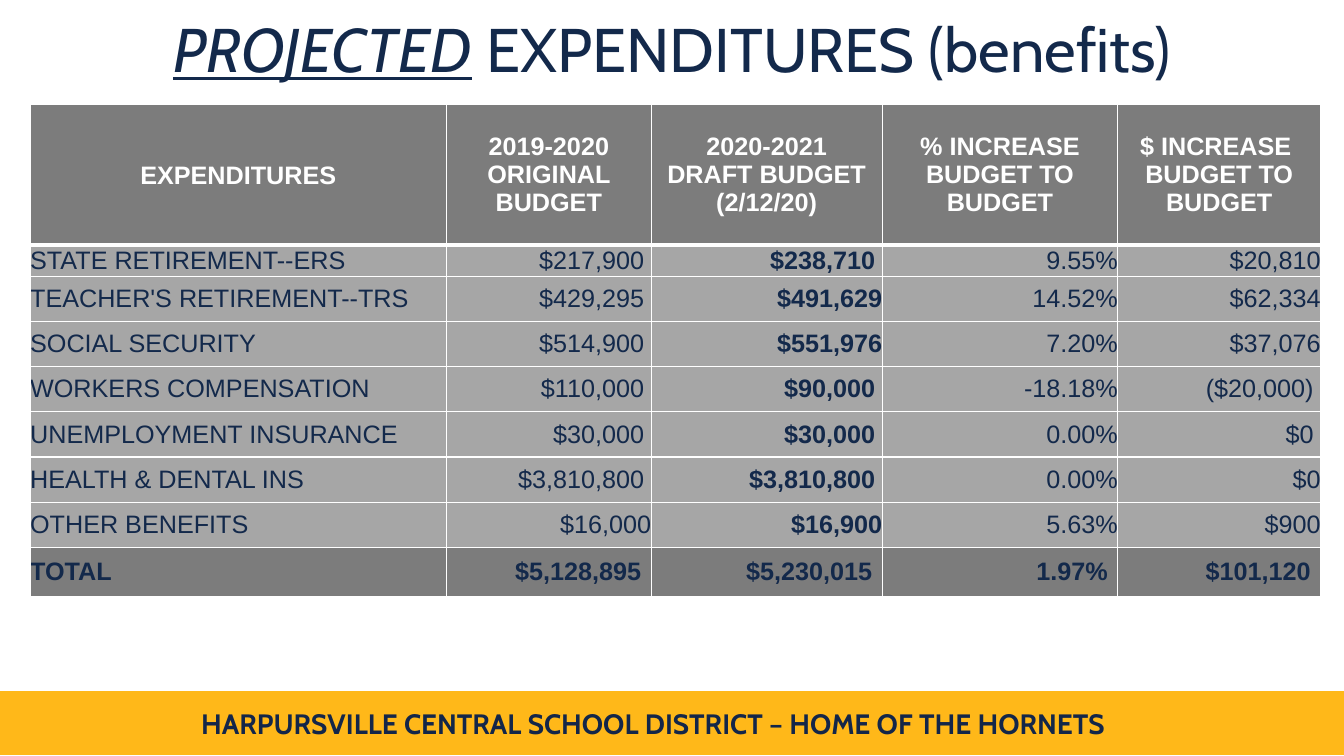
"""Build the projected benefits expenditures slide with its budget table."""
from dataclasses import dataclass
from typing import NamedTuple

from lxml.etree import SubElement
from pptx import Presentation
from pptx.dml.color import RGBColor
from pptx.enum.shapes import MSO_SHAPE as Preset
from pptx.enum.text import MSO_ANCHOR as Anchor, PP_ALIGN as Align
from pptx.oxml.ns import qn
from pptx.util import Cm, Pt

NAVY, FOOTER_NAVY, GOLD = "13294B", "132649", "FFB819"
WHITE, DARK_GREY, LIGHT_GREY = "FFFFFF", "7C7C7C", "A6A6A6"


class Area(NamedTuple):
    left: float
    top: float
    width: float
    height: float

    def lengths(self) -> list:
        return [Cm(value) for value in self]


class Margins(NamedTuple):
    left: float
    right: float
    top: float
    bottom: float


@dataclass
class Span:
    text: str
    size: int = 18
    font: str = "Arial"
    color: str = NAVY
    bold: bool = False
    italic: bool = False
    underline: bool = False


@dataclass
class CellLook:
    fill: str
    margins: Margins
    align: Align
    top_line: float = 1
    bottom_line: float = 1


NO_MARGINS = Margins(0, 0, 0, 0)
HEADING_MARGINS = Margins(0.03, 0.03, 0.03, 0)
USUAL_MARGINS = Margins(0.25, 0.25, 0.13, 0.13)

TABLE_AREA = Area(0.76, 2.64, 32.52, 12.4)
COLUMN_WIDTHS = [10.49, 5.16, 5.82, 5.94, 5.11]
ROW_HEIGHTS = [3.53, 0.79] + [1.14] * 6 + [1.24]
DRAFT_COLUMN = 2
BUDGET = [
    ["EXPENDITURES", "2019-2020\nORIGINAL BUDGET", "2020-2021\nDRAFT BUDGET (2/12/20)",
     "% INCREASE BUDGET TO BUDGET", "$ INCREASE \nBUDGET TO BUDGET"],
    ["STATE RETIREMENT--ERS", "$217,900 ", "$238,710 ", "9.55%", "$20,810"],
    ["TEACHER'S RETIREMENT--TRS", "$429,295 ", "$491,629", "14.52%", "$62,334"],
    ["SOCIAL SECURITY", "$514,900 ", "$551,976", "7.20%", "$37,076"],
    ["WORKERS COMPENSATION", "$110,000 ", "$90,000 ", "-18.18%", "($20,000) "],
    ["UNEMPLOYMENT INSURANCE", "$30,000 ", "$30,000 ", "0.00%", "$0 "],
    ["HEALTH & DENTAL INS", "$3,810,800 ", "$3,810,800 ", "0.00%", "$0"],
    ["OTHER BENEFITS", "$16,000", "$16,900", "5.63%", "$900"],
    ["TOTAL", "$5,128,895", "$5,230,015", "1.97%", "$101,120"],
]
TOTAL_ROW = len(BUDGET) - 1


def rgb(color: str) -> RGBColor:
    """Turn a hex string into a colour."""
    return RGBColor.from_string(color)


def paint(target, color: str) -> None:
    """Give a shape or cell a solid fill."""
    target.fill.solid()
    target.fill.fore_color.rgb = rgb(color)


def add_spans(para, spans: list[Span], align: Align) -> None:
    """Write a paragraph run by run."""
    para.alignment = align
    for span in spans:
        run = para.add_run()
        run.text = span.text
        font = run.font
        font.name, font.size, font.color.rgb = span.font, Pt(span.size), rgb(span.color)
        font.bold, font.italic, font.underline = span.bold, span.italic, span.underline


def add_text(page, area: Area, spans: list[Span], anchor: Anchor):
    """Add a wrapped text box with one centred paragraph."""
    box = page.shapes.add_textbox(*area.lengths())
    frame = box.text_frame
    frame.word_wrap = True
    frame.vertical_anchor = anchor
    add_spans(frame.paragraphs[0], spans, Align.CENTER)
    return box


def add_footer(page) -> None:
    """Draw the gold band and the district name."""
    band = page.shapes.add_shape(Preset.RECTANGLE, *Area(0, 17.42, 33.87, 1.6).lengths())
    band.shadow.inherit = False
    paint(band, GOLD)
    band.line.color.rgb = rgb(GOLD)
    band.line.width = Pt(1)
    name = Span("HARPURSVILLE CENTRAL SCHOOL DISTRICT – HOME OF THE HORNETS",
                20, "Cabin", FOOTER_NAVY, bold=True)
    add_text(page, Area(4.47, 17.68, 23.98, 1.12), [name], Anchor.TOP)


def add_title(page) -> None:
    """Add the slide title."""
    spans = [Span("PROJECTED", 44, "Cabin", italic=True, underline=True),
             Span(" EXPENDITURES (benefits)", 44, "Cabin")]
    title = add_text(page, Area(2.34, 0, 29.21, 2.64), spans, Anchor.MIDDLE)
    paint(title, WHITE)
    title.text_frame.paragraphs[0].line_spacing = 0.9


def draw_borders(cell, look: CellLook) -> None:
    """Give a cell white borders."""
    properties = cell._tc.get_or_add_tcPr()
    widths = {"a:lnL": 1, "a:lnR": 1, "a:lnT": look.top_line, "a:lnB": look.bottom_line}
    for tag, width in widths.items():
        line = SubElement(properties, qn(tag), w=str(Pt(width)))
        SubElement(SubElement(line, qn("a:solidFill")), qn("a:srgbClr"), val=WHITE)


def cell_look(row: int, column: int) -> CellLook:
    """Choose the look of a cell from its place in the table."""
    if row == 0:
        margins = USUAL_MARGINS if column else HEADING_MARGINS
        return CellLook(DARK_GREY, margins, Align.CENTER, bottom_line=3)
    align = Align.RIGHT if column else Align.LEFT
    if row == TOTAL_ROW:
        return CellLook(DARK_GREY, USUAL_MARGINS if column else NO_MARGINS, align)
    return CellLook(LIGHT_GREY, NO_MARGINS, align, top_line=3 if row == 1 else 1)


def fill_cell(cell, text: str, row: int, column: int) -> None:
    """Style one cell and write its lines."""
    look = cell_look(row, column)
    draw_borders(cell, look)
    paint(cell, look.fill)
    cell.vertical_anchor = Anchor.MIDDLE
    (cell.margin_left, cell.margin_right,
     cell.margin_top, cell.margin_bottom) = [Cm(margin) for margin in look.margins]
    color = NAVY if row else WHITE
    bold = row in (0, TOTAL_ROW) or column == DRAFT_COLUMN
    frame = cell.text_frame
    for index, line in enumerate(text.split("\n")):
        para = frame.add_paragraph() if index else frame.paragraphs[0]
        add_spans(para, [Span(line, color=color, bold=bold)], look.align)


def add_budget_table(page) -> None:
    """Add the table of benefit expenditures."""
    table = page.shapes.add_table(len(BUDGET), len(COLUMN_WIDTHS), *TABLE_AREA.lengths()).table
    table.first_row = table.horz_banding = False
    for column, width in zip(table.columns, COLUMN_WIDTHS):
        column.width = Cm(width)
    for row, height in zip(table.rows, ROW_HEIGHTS):
        row.height = Cm(height)
    for row, texts in enumerate(BUDGET):
        for column, text in enumerate(texts):
            fill_cell(table.cell(row, column), text, row, column)


def main() -> None:
    """Build and save the deck."""
    deck = Presentation()
    deck.slide_width, deck.slide_height = Cm(33.87), Cm(19.05)
    page = deck.slides.add_slide(deck.slide_layouts[6])
    add_footer(page)
    add_budget_table(page)
    add_title(page)
    deck.save("out.pptx")


if __name__ == "__main__":
    main()
